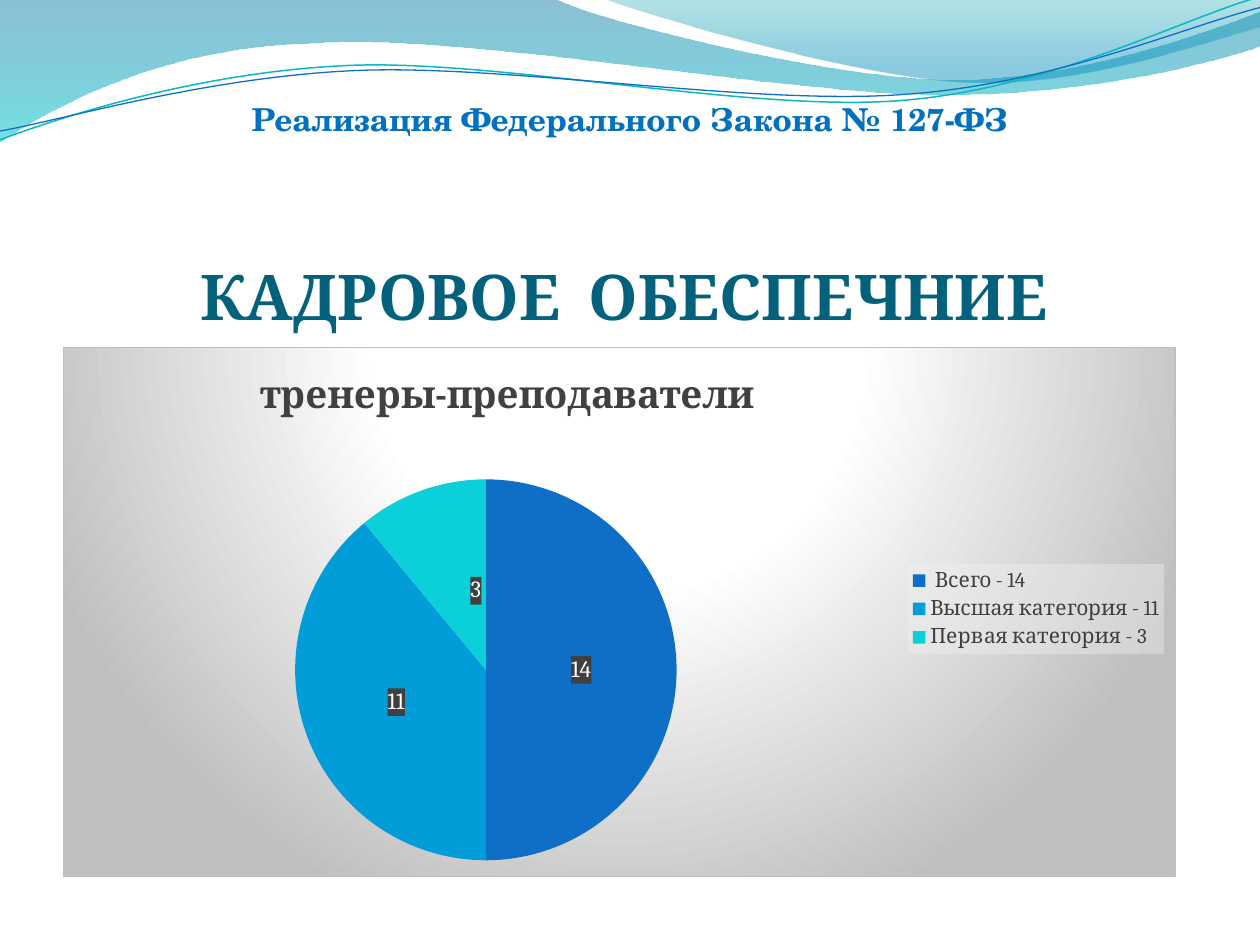
from lxml import etree
from pptx import Presentation
from pptx.chart.data import CategoryChartData
from pptx.dml.color import RGBColor
from pptx.enum.chart import XL_CHART_TYPE, XL_LABEL_POSITION, XL_LEGEND_POSITION
from pptx.enum.text import MSO_ANCHOR, MSO_AUTO_SIZE, PP_ALIGN
from pptx.oxml import parse_xml
from pptx.oxml.ns import nsdecls, qn
from pptx.util import Inches, Pt

PIE = XL_CHART_TYPE.PIE
LABEL_CENTER = XL_LABEL_POSITION.CENTER
LEGEND_RIGHT = XL_LEGEND_POSITION.RIGHT
CENTER = PP_ALIGN.CENTER
BOTTOM, MIDDLE = MSO_ANCHOR.BOTTOM, MSO_ANCHOR.MIDDLE
NO_AUTOFIT = MSO_AUTO_SIZE.NONE

FONT = "Cambria"
CHART_NAME = "тренеры-преподаватели"
SLICES = [
    (" Всего - 14", 50, "14", "0F6FC6"),
    ("Высшая категория - 11", 39, "11", "009DD9"),
    ("Первая категория - 3", 11, "3", "0BD0D9"),
]
DOWNWARD = '<a:lin ang="5400000" scaled="0"/>'
FROM_ABOVE = ('<a:path path="circle"><a:fillToRect l="50000" t="-80000" '
              'r="50000" b="180000"/></a:path>')

WIDE_WAVE = [(0, 0), (4.4, -0.01),
             (4.76, 0.17, 6.64, 0.63, 7.58, 0.63), (8.53, 0.63, 9.58, 0.26, 10, 0.09),
             (10.01, 0.36),
             (9.83, 0.44, 8.7, 0.76, 7.46, 0.75), (6.22, 0.75, 3.82, 0.28, 2.57, 0.34),
             (1.29, 0.36, 0.46, 0.83, -0.01, 1.13)]
RIGHT_WAVE = [(4.79, -0.01), (5.09, 0.11, 6.82, 0.62, 7.69, 0.65),
              (8.56, 0.69, 9.61, 0.32, 10, 0.21), (10, 0)]
TEAL_LINE = [(0, 1.11), (0.48, 0.93, 1.58, 0.57, 2.77, 0.52),
             (3.95, 0.47, 5.93, 0.89, 7.13, 0.8), (8.33, 0.71, 9.38, 0.15, 9.98, -0.02)]
BLUE_LINE = [(0, 1.04), (0.47, 0.96, 1.64, 0.61, 2.83, 0.56),
             (4.03, 0.51, 5.97, 0.84, 7.17, 0.75), (8.36, 0.67, 9.41, 0.21, 10, 0.06)]


def color(value):
    return RGBColor.from_string(value)


def style_font(font, size, value, bold=False, name=FONT):
    font.name, font.size, font.bold = name, Pt(size), bold
    font.color.rgb = color(value)


def solid_xml(value, opacity=100):
    return (f'<a:solidFill><a:srgbClr val="{value}"><a:alpha val="{opacity * 1000}"/>'
            '</a:srgbClr></a:solidFill>')


def gradient_xml(stops, direction):
    parts = "".join(
        f'<a:gs pos="{position * 1000}"><a:srgbClr val="{value}">'
        f'<a:alpha val="{opacity * 1000}"/></a:srgbClr></a:gs>'
        for position, value, opacity in stops)
    return (f'<a:gradFill {nsdecls("a")} rotWithShape="1"><a:gsLst>{parts}</a:gsLst>'
            f'{direction}</a:gradFill>')


def chart_area_xml(content):
    return parse_xml(f'<c:spPr {nsdecls("c", "a")}>{content}</c:spPr>')


def add_outline(slide, outline, close):
    ends = [(Inches(segment[-2]), Inches(segment[-1])) for segment in outline]
    builder = slide.shapes.build_freeform(*ends[0])
    builder.add_line_segments(ends[1:], close=close)
    shape = builder.convert_to_shape()
    shape.shadow.inherit = False
    lines = list(shape._element.iter(qn("a:lnTo")))
    for line, segment in zip(lines, outline[1:]):
        if len(segment) == 6:
            points = "".join(
                f'<a:pt x="{Inches(x) - shape.left}" y="{Inches(y) - shape.top}"/>'
                for x, y in zip(segment[::2], segment[1::2]))
            curve = parse_xml(f'<a:cubicBezTo {nsdecls("a")}>{points}</a:cubicBezTo>')
            line.getparent().replace(line, curve)
    return shape


def add_wave(slide, outline, stops):
    shape = add_outline(slide, outline, True)
    shape.line.fill.background()
    geometry = shape._element.spPr.find(qn("a:custGeom"))
    geometry.addnext(parse_xml(gradient_xml(stops, DOWNWARD)))


def add_curve(slide, outline, value, width):
    shape = add_outline(slide, outline, False)
    shape.fill.background()
    shape.line.color.rgb = color(value)
    shape.line.width = Pt(width)


def fill_placeholder(slide, shape, box, margins, anchor, text, size, value, name=FONT):
    slide.shapes._spTree.append(shape._element)
    shape.left, shape.top, shape.width, shape.height = map(Inches, box)
    frame = shape.text_frame
    frame.auto_size, frame.word_wrap, frame.vertical_anchor = NO_AUTOFIT, True, anchor
    (frame.margin_left, frame.margin_top,
     frame.margin_right, frame.margin_bottom) = map(Inches, margins)
    paragraph = frame.paragraphs[0]
    paragraph.alignment = CENTER
    run = paragraph.add_run()
    run.text = text
    style_font(run.font, size, value, True, name)
    return paragraph


def end_with_break(paragraph, size):
    paragraph.add_line_break()
    line_break = paragraph._p.find(qn("a:br"))
    etree.SubElement(line_break, qn("a:rPr"), sz=str(size * 100))
    etree.SubElement(paragraph._p, qn("a:endParaRPr"), sz=str(size * 100))


def remove_bullet(paragraph):
    properties = paragraph._p.get_or_add_pPr()
    properties.set("marL", "0")
    properties.set("indent", "0")
    etree.SubElement(properties, qn("a:buNone"))


def place_part(part, index, edge=True, **shares):
    for layout in part.findall(qn("c:layout")):
        part.remove(layout)
    target = '<c:layoutTarget val="inner"/>' if "plotArea" in part.tag else ""
    modes = '<c:xMode val="edge"/><c:yMode val="edge"/>' if edge else ""
    values = "".join(f'<c:{key} val="{share}"/>' for key, share in shares.items())
    part.insert(index, parse_xml(
        f'<c:layout {nsdecls("c")}><c:manualLayout>{target}{modes}{values}'
        '</c:manualLayout></c:layout>'))


def format_slices(series):
    labels = series.data_labels
    labels.show_percentage, labels.show_value = True, False
    labels.position = LABEL_CENTER
    style_font(labels.font, 13.3, "FFFFFF", True)
    for index, (_, _, text, value) in enumerate(SLICES):
        point = series.points[index]
        point.format.fill.solid()
        point.format.fill.fore_color.rgb = color(value)
        label = point.data_label
        run = label.text_frame.paragraphs[0].add_run()
        run.text = text
        style_font(run.font, 13.3, "FFFFFF")
        label.position = LABEL_CENTER
        rich_text = label._dLbl.find(qn("c:tx"))
        rich_text.addnext(chart_area_xml(solid_xml("404040", 90)))
    place_part(label._dLbl, 1, edge=False, x=0.02, y=0.02)


def add_staff_chart(slide):
    data = CategoryChartData()
    data.categories = [row[0] for row in SLICES]
    data.add_series(CHART_NAME, [row[1] for row in SLICES])
    box = map(Inches, (0.5, 2.75, 8.83, 4.21))
    chart = slide.shapes.add_chart(PIE, *box, data).chart
    style_font(chart.font, 10, "000000")
    plot = chart.plots[0]
    plot.vary_by_categories = True
    format_slices(plot.series[0])

    chart.has_title = True
    run = chart.chart_title.text_frame.paragraphs[0].add_run()
    run.text = CHART_NAME
    style_font(run.font, 22, "404040", True)

    chart.has_legend = True
    legend = chart.legend
    legend.position, legend.include_in_layout = LEGEND_RIGHT, False
    style_font(legend.font, 12, "404040")
    overlay = legend._element.find(qn("c:overlay"))
    overlay.addnext(chart_area_xml(solid_xml("F2F2F2", 39)))

    body = chart._chartSpace.find(qn("c:chart"))
    place_part(body.find(qn("c:title")), 1, x=0.17, y=0.03)
    place_part(body.find(qn("c:plotArea")), 0, x=0.2, y=0.25, w=0.36, h=0.72)
    place_part(legend._element, 1, x=0.76, y=0.41, w=0.23, h=0.17)
    stops = [(0, "FFFFFF", 100), (39, "FFFFFF", 100), (100, "BFBFBF", 100)]
    border = f'<a:ln w="{Pt(0.75)}">{solid_xml("BFBFBF")}</a:ln>'
    body.addnext(chart_area_xml(gradient_xml(stops, FROM_ABOVE) + border))


def main():
    presentation = Presentation()
    presentation.slide_width, presentation.slide_height = Inches(10), Inches(7.5)
    slide = presentation.slides.add_slide(presentation.slide_layouts[1])
    add_wave(slide, WIDE_WAVE, [(0, "0074A1", 45), (100, "00C6CF", 55)])
    add_wave(slide, RIGHT_WAVE, [(0, "00A1A9", 30), (80, "008BBF", 45)])
    add_curve(slide, TEAL_LINE, "0AB8BF", 0.85)
    add_curve(slide, BLUE_LINE, "0F6FC6", 0.75)
    title = fill_placeholder(
        slide, slide.shapes.title, (0.5, 0.77, 9, 0.62), (0, 0.05, 0, 0), BOTTOM,
        "Реализация Федерального Закона № 127-ФЗ", 18, "0070C0", "TeX Gyre Schola")
    end_with_break(title, 18)
    heading = fill_placeholder(
        slide, slide.placeholders[1], (0.5, 2.03, 8.91, 0.62), (0.05, 0, 0.05, 0),
        MIDDLE, "КАДРОВОЕ  ОБЕСПЕЧНИЕ", 36, "04617B")
    remove_bullet(heading)
    add_staff_chart(slide)
    presentation.save("out.pptx")


if __name__ == "__main__":
    main()
